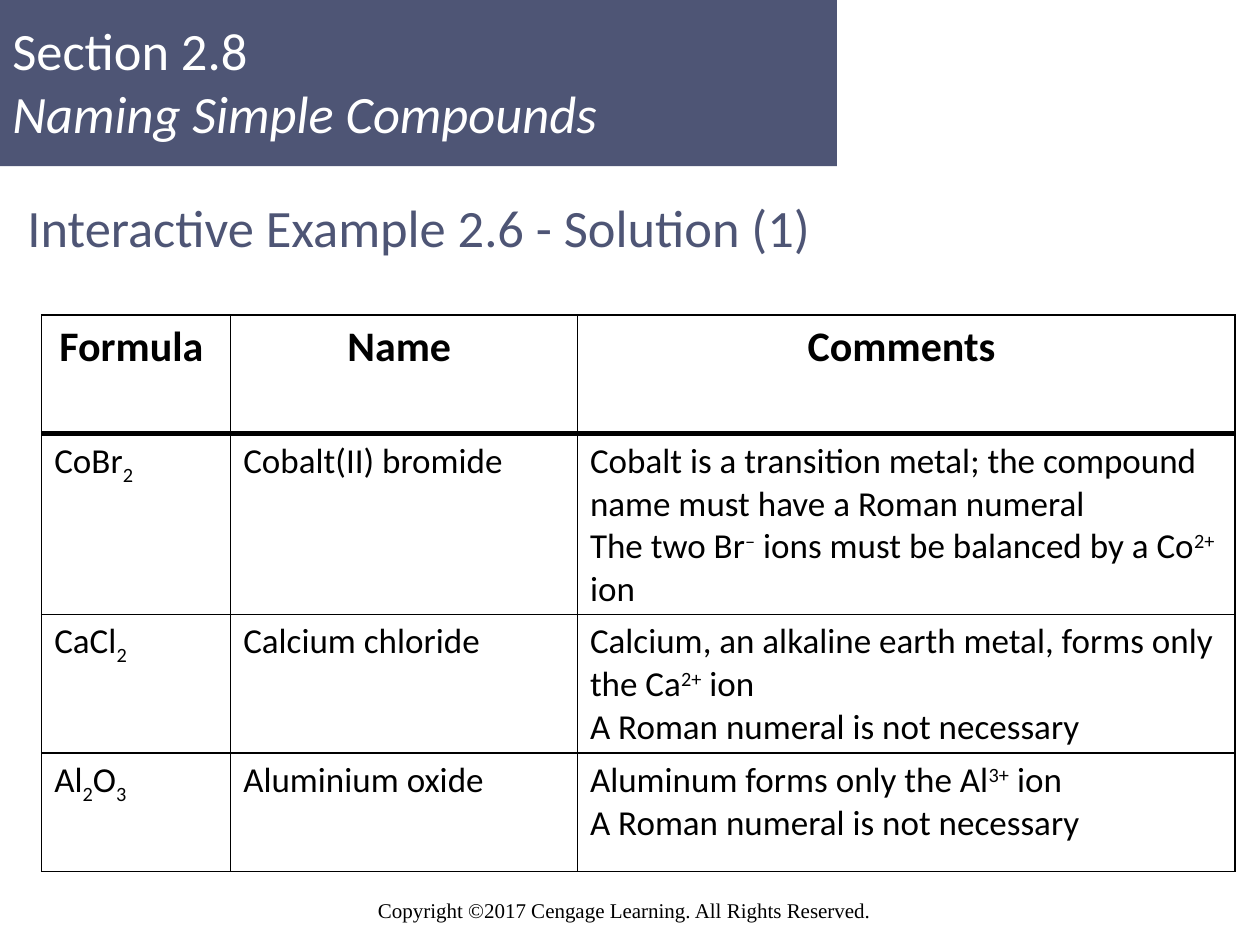
"""Build the slide on naming simple compounds, with its table of solutions."""
from dataclasses import dataclass

from lxml.etree import SubElement
from pptx import Presentation
from pptx.dml.color import RGBColor
from pptx.enum.shapes import MSO_SHAPE
from pptx.enum.text import MSO_ANCHOR, MSO_AUTO_SIZE, PP_ALIGN
from pptx.oxml.ns import qn
from pptx.util import Cm, Pt

SLATE, WHITE, BLACK = "4E5575", "FFFFFF", "000000"
BASELINES = {"_": "-25000", "^": "30000"}
COLUMN_WIDTHS = (3.81, 6.99, 13.26)
ROW_HEIGHTS = (2.39, 3.63, 2.79, 2.39)
HEADINGS = ("Formula ", "Name ", "Comments ")


@dataclass(frozen=True)
class Style:
    size: int
    color: str
    font: str = "Calibri"
    bold: bool = False
    italic: bool = False
    align: PP_ALIGN = PP_ALIGN.LEFT


@dataclass(frozen=True)
class Compound:
    formula: str
    name: str
    comments: tuple[str, ...]


COMPOUNDS = (
    Compound("CoBr|_2", "Cobalt(II) bromide", (
        "Cobalt is a transition metal; the compound name must have a Roman numeral",
        "The two Br|^–| ions must be balanced by a Co|^2+| ion")),
    Compound("CaCl|_2", "Calcium chloride", (
        "Calcium, an alkaline earth metal, forms only the Ca|^2+| ion",
        "A Roman numeral is not necessary")),
    Compound("Al|_2|O|_3", "Aluminium oxide", (
        "Aluminum forms only the Al|^3+| ion",
        "A Roman numeral is not necessary")),
)


def rgb(color: str) -> RGBColor:
    """Turn a hex string into a colour."""
    return RGBColor.from_string(color)


def write(paragraph, text: str, style: Style) -> None:
    """Write text whose |-parts led by _ or ^ are lowered or raised."""
    paragraph.alignment = style.align
    font = paragraph.font
    font.name, font.size = style.font, Pt(style.size)
    font.bold, font.italic = style.bold, style.italic
    font.color.rgb = rgb(style.color)
    for part in text.split("|"):
        run = paragraph.add_run()
        baseline = BASELINES.get(part[0])
        run.text = part[1:] if baseline else part
        if baseline:
            run._r.get_or_add_rPr().set("baseline", baseline)


def write_lines(frame, lines: tuple[str, ...], style: Style) -> None:
    """Write one paragraph per line."""
    for index, line in enumerate(lines):
        paragraph = frame.add_paragraph() if index else frame.paragraphs[0]
        write(paragraph, line, style)


def add_border(cell, side: str, width: float) -> None:
    """Draw one black side of a cell."""
    line = SubElement(cell._tc.get_or_add_tcPr(), qn(f"a:ln{side}"), w=str(Pt(width)))
    fill = SubElement(line, qn("a:solidFill"))
    SubElement(fill, qn("a:srgbClr"), val=BLACK)


def fill_cell(cell, lines: tuple[str, ...], style: Style, top: float, bottom: float) -> None:
    """Give a cell its borders, white fill and text."""
    for side, width in (("L", 1), ("R", 1), ("T", top), ("B", bottom)):
        add_border(cell, side, width)
    cell.fill.solid()
    cell.fill.fore_color.rgb = rgb(WHITE)
    write_lines(cell.text_frame, lines, style)


def add_section_banner(slide) -> None:
    """Add the section number and name on a slate band."""
    band = slide.shapes.add_shape(MSO_SHAPE.RECTANGLE, 0, 0, Cm(16.87), Cm(3.35))
    band.shadow.inherit = False
    band.fill.solid()
    band.fill.fore_color.rgb = rgb(SLATE)
    band.line.fill.background()
    section = slide.shapes.add_textbox(0, 0, Cm(20.35), Cm(3.25)).text_frame
    section.word_wrap = True
    section.vertical_anchor = MSO_ANCHOR.MIDDLE
    write(section.paragraphs[0], "Section 2.8", Style(30, WHITE))
    write(section.add_paragraph(), "Naming Simple Compounds", Style(30, WHITE, italic=True))


def add_title(slide) -> None:
    """Place and format the title."""
    title = slide.shapes.title
    title.left, title.top, title.width, title.height = Cm(0.3), Cm(3.61), Cm(24.59), Cm(1.93)
    title.text_frame.auto_size = MSO_AUTO_SIZE.NONE
    title.text_frame.vertical_anchor = MSO_ANCHOR.MIDDLE
    write(title.text_frame.paragraphs[0], "Interactive Example 2.6 - Solution (1)", Style(30, SLATE))


def add_compound_table(slide) -> None:
    """Add the table of formulas, names and comments."""
    table = slide.shapes.add_table(
        len(ROW_HEIGHTS), len(COLUMN_WIDTHS), Cm(0.84), Cm(6.35),
        Cm(sum(COLUMN_WIDTHS)), Cm(sum(ROW_HEIGHTS))).table
    table.horz_banding = False
    for column, width in zip(table.columns, COLUMN_WIDTHS):
        column.width = Cm(width)
    for row, height in zip(table.rows, ROW_HEIGHTS):
        row.height = Cm(height)
    heading_style = Style(24, BLACK, bold=True, align=PP_ALIGN.CENTER)
    for column, heading in enumerate(HEADINGS):
        fill_cell(table.cell(0, column), (heading,), heading_style, top=1, bottom=3)
    for row, compound in enumerate(COMPOUNDS, start=1):
        entries = ((compound.formula,), (compound.name,), compound.comments)
        for column, lines in enumerate(entries):
            fill_cell(table.cell(row, column), lines, Style(20, BLACK),
                      top=3 if row == 1 else 1, bottom=1)


def add_copyright(slide) -> None:
    """Add the copyright line."""
    notice = slide.shapes.add_textbox(Cm(7.37), Cm(17.96), Cm(10.59), Cm(0.76)).text_frame
    notice.word_wrap = True
    write(notice.paragraphs[0], "Copyright ©2017 Cengage Learning. All Rights Reserved.",
          Style(12, BLACK, font="Times New Roman"))


def main() -> None:
    """Build and save the slide."""
    presentation = Presentation()
    presentation.slide_width, presentation.slide_height = Cm(25.4), Cm(19.05)
    slide = presentation.slides.add_slide(presentation.slide_layouts[5])
    add_section_banner(slide)
    add_title(slide)
    add_compound_table(slide)
    add_copyright(slide)
    presentation.save("out.pptx")


if __name__ == "__main__":
    main()
